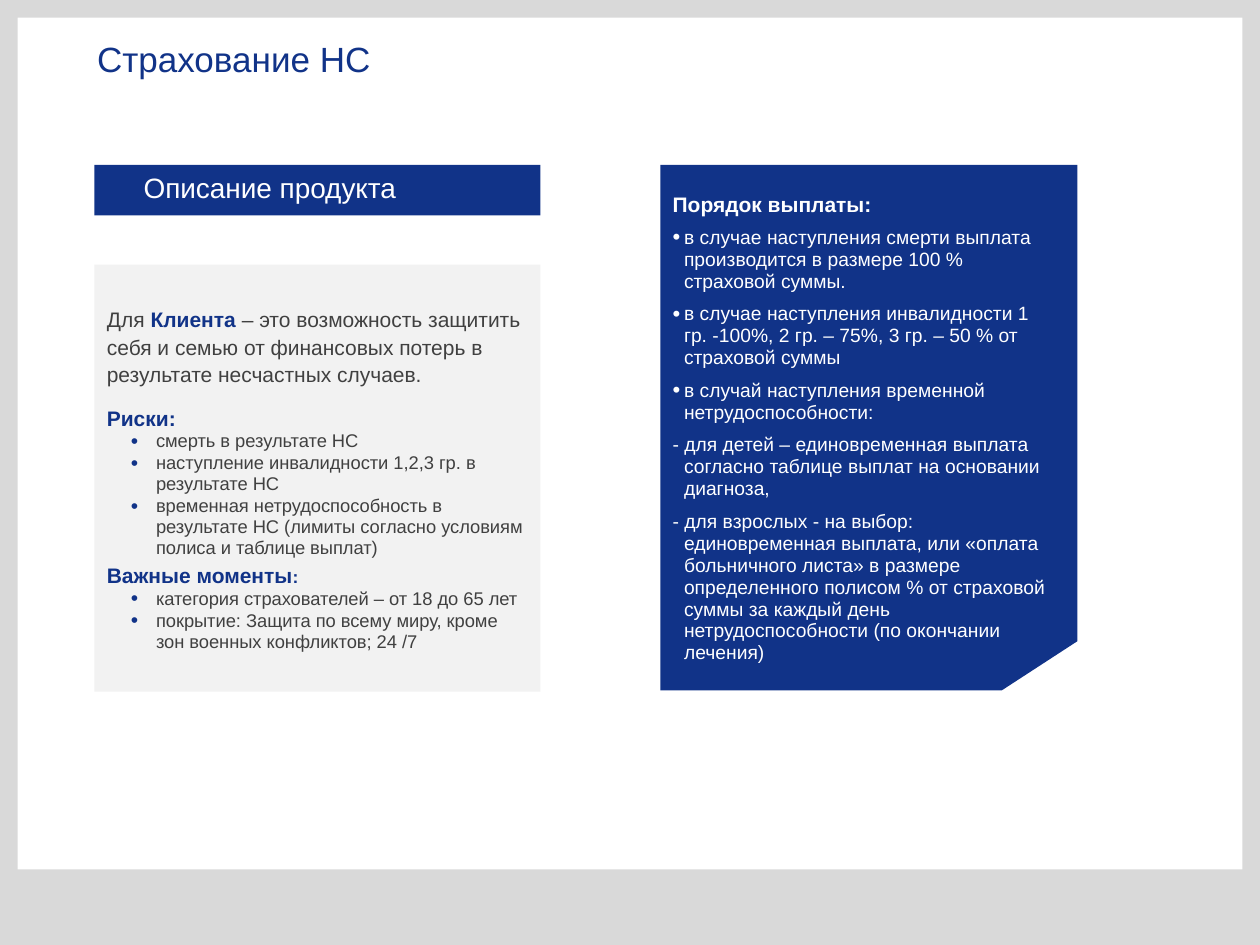
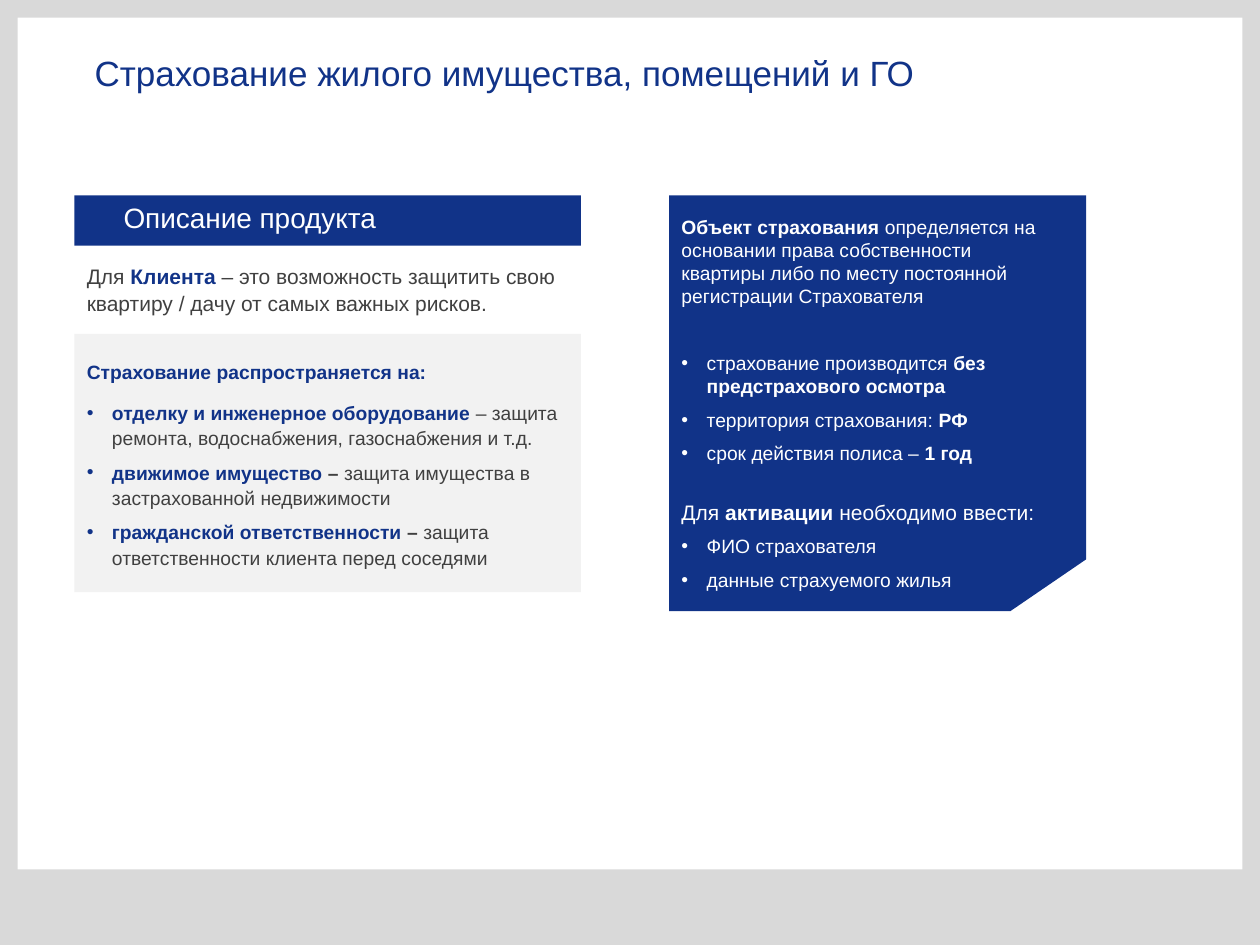
"""Builds two insurance product slides: accident cover and home property cover."""
import dataclasses
import functools
from typing import Any, Optional

import lxml.etree
import pptx
import pptx.dml.color
import pptx.enum.shapes
import pptx.enum.text
import pptx.oxml.ns
import pptx.util

Inches = pptx.util.Inches
Pt = pptx.util.Pt
ANCHOR = pptx.enum.text.MSO_ANCHOR

COLORS = {"navy": "113388", "pale": "F2F2F2", "ink": "404040", "white": "FFFFFF", "frame": "D9D9D9"}
STYLES = {
    "plain": {"color": "ink", "bold": False},
    "dash": {"color": "ink", "bold": True},
    "key": {"color": "navy", "bold": True},
    "light": {"color": "white", "bold": False},
    "light key": {"color": "white", "bold": True},
    "title": {"color": "navy", "bold": False},
}
PANEL_MARGINS = (0.1, 0.05, 0.24, 0.05)


@dataclasses.dataclass(frozen=True)
class Span:
    text: str
    style: str = "plain"
    size: Optional[float] = None


@dataclasses.dataclass(frozen=True)
class Para:
    spans: tuple[Span, ...]
    size: float = 12
    before: float = 0
    line: float = 1.0
    left: float = 0
    hang: float = 0
    bullet: Optional[str] = None
    bullet_percent: int = 100


@dataclasses.dataclass(frozen=True)
class Box:
    left: float
    top: float
    width: float
    height: float


@dataclasses.dataclass(frozen=True)
class Block:
    box: Box
    paras: tuple[Para, ...]
    fill: Optional[str] = None
    anchor: Any = ANCHOR.MIDDLE
    margins: tuple[float, float, float, float] = (0.1, 0.05, 0.1, 0.05)
    cut: Optional[tuple[float, float]] = None


@dataclasses.dataclass(frozen=True)
class Page:
    title: str
    title_box: Box
    title_line: float
    title_anchor: Any
    blocks: tuple[Block, ...]


def rgb(name: str) -> pptx.dml.color.RGBColor:
    """Return the named colour."""
    return pptx.dml.color.RGBColor.from_string(COLORS[name])


def set_all(target: Any, values: dict[str, Any]) -> None:
    """Set every named attribute on the target."""
    for name, value in values.items():
        setattr(target, name, value)


def place(box: Box) -> dict[str, int]:
    """Return the box as lengths keyed by shape attribute."""
    return {name: Inches(value) for name, value in dataclasses.asdict(box).items()}


def add_bullet(properties: Any, para: Para) -> None:
    """Add the bullet colour, size and sign to paragraph properties."""
    qn = pptx.oxml.ns.qn
    colour = lxml.etree.SubElement(properties, qn("a:buClr"))
    lxml.etree.SubElement(colour, qn("a:srgbClr"), val=COLORS[para.bullet])
    lxml.etree.SubElement(properties, qn("a:buSzPct"), val=str(para.bullet_percent * 1000))
    lxml.etree.SubElement(properties, qn("a:buFont"), typeface="Arial")
    lxml.etree.SubElement(properties, qn("a:buChar"), char="•")


def write(frame: Any, paras: tuple[Para, ...], anchor: Any, margins: tuple[float, ...]) -> None:
    """Fill a text frame with formatted paragraphs."""
    sides = ("margin_left", "margin_top", "margin_right", "margin_bottom")
    set_all(frame, {"word_wrap": True, "auto_size": pptx.enum.text.MSO_AUTO_SIZE.NONE,
                    "vertical_anchor": anchor,
                    **{side: Inches(margin) for side, margin in zip(sides, margins)}})
    for index, para in enumerate(paras):
        paragraph = frame.add_paragraph() if index else frame.paragraphs[0]
        set_all(paragraph, {"alignment": pptx.enum.text.PP_ALIGN.LEFT,
                            "line_spacing": para.line, "space_before": Pt(para.before)})
        properties = paragraph._p.get_or_add_pPr()
        properties.set("marL", str(Inches(para.left)))
        properties.set("indent", str(Inches(-para.hang)))
        if para.bullet:
            add_bullet(properties, para)
        for span in para.spans:
            run = paragraph.add_run()
            run.text = span.text
            style = STYLES[span.style]
            set_all(run.font, {"name": "Arial", "size": Pt(span.size or para.size), "bold": style["bold"]})
            run.font.color.rgb = rgb(style["color"])


def paint(shape: Any, fill: str) -> None:
    """Give a shape a flat fill without line or shadow."""
    shape.shadow.inherit = False
    shape.fill.solid()
    shape.fill.fore_color.rgb = rgb(fill)
    shape.line.fill.background()


def add_cut_panel(slide: Any, box: Box, cut: tuple[float, float]) -> Any:
    """Draw a rectangle whose lower right corner is cut off."""
    right, bottom = box.left + box.width, box.top + box.height
    corners = [(right, box.top), (right, bottom - cut[1]), (right - cut[0], bottom), (box.left, bottom)]
    builder = slide.shapes.build_freeform(Inches(box.left), Inches(box.top))
    builder.add_line_segments([(Inches(x), Inches(y)) for x, y in corners])
    return builder.convert_to_shape()


def add_block(slide: Any, block: Block) -> None:
    """Draw one text block in its outline."""
    if block.cut:
        shape = add_cut_panel(slide, block.box, block.cut)
    elif block.fill:
        shape = slide.shapes.add_shape(pptx.enum.shapes.MSO_SHAPE.RECTANGLE, **place(block.box))
    else:
        shape = slide.shapes.add_textbox(**place(block.box))
    if block.fill:
        paint(shape, block.fill)
    write(shape.text_frame, block.paras, block.anchor, block.margins)


def frame_layout(layout: Any, slide: Any) -> None:
    """Give the layout a grey surround and a white sheet."""
    layout.background.fill.solid()
    layout.background.fill.fore_color.rgb = rgb("frame")
    sheet = slide.shapes.add_shape(pptx.enum.shapes.MSO_SHAPE.RECTANGLE, **place(Box(0.14, 0.14, 9.72, 6.76)))
    paint(sheet, "white")
    layout.shapes.element.insert(2, sheet.element)


def heading(left: float, top: float, width: float) -> Block:
    """Return the product description band."""
    para = Para((Span("Описание продукта", "light"),), size=16, line=0.8)
    return Block(Box(left, top, width, 0.4), (para,), "navy", margins=(0.39, 0, 0.39, 0))


def client_para(benefit: str) -> Para:
    """Return the sentence on what the client gains."""
    return Para((Span("Для "), Span("Клиента ", "key"), Span(benefit)), line=1.1)


def risk_item(text: str) -> Para:
    """Return a small bullet of the accident description."""
    return Para((Span(text),), 10.5, 0.5, 0.95, 0.39, 0.2, "navy", 115)


def payout_item(text: str, bullet: Optional[str] = "white") -> Para:
    """Return a rule of the payout panel."""
    return Para((Span(text, "light"),), 11, 6, 0.95, 0.09, 0.09, bullet, 115)


cover_item = functools.partial(Para, size=11, before=5, line=1.1, left=0.2, hang=0.2, bullet="navy")
policy_item = functools.partial(Para, size=11, before=6, left=0.2, hang=0.2, bullet="white")

ACCIDENT_DESCRIPTION = (
    client_para("– это возможность защитить себя и семью от финансовых потерь в результате несчастных случаев."),
    Para((Span("Риски:", "key"),), before=9, line=1.1),
    risk_item("смерть в результате НС"),
    risk_item("наступление инвалидности 1,2,3 гр. в результате НС"),
    risk_item("временная нетрудоспособность в результате НС (лимиты согласно условиям полиса и таблице выплат)"),
    Para((Span("Важные моменты", "key"), Span(":", "key", 10)), before=3, line=0.95),
    risk_item("категория страхователей – от 18 до 65 лет"),
    risk_item("покрытие: Защита по всему миру, кроме зон военных конфликтов; 24 /7"),
)
PAYOUT = (
    Para((Span("Порядок выплаты:", "light key"),), left=0.09, hang=0.09),
    payout_item("в случае наступления смерти выплата производится в размере 100 % страховой суммы."),
    payout_item("в случае наступления инвалидности 1 гр. -100%, 2 гр. – 75%, 3 гр. – 50 % от страховой суммы"),
    payout_item("в случай наступления временной нетрудоспособности:"),
    payout_item("- для детей – единовременная выплата согласно таблице выплат на основании диагноза,", None),
    payout_item("- для взрослых - на выбор: единовременная выплата, или «оплата больничного листа» в размере "
                "определенного полисом % от страховой суммы за каждый день нетрудоспособности "
                "(по окончании лечения)", None),
)
COVERAGE = (
    Para((Span("Страхование распространяется на:", "key"),), size=11, line=1.1),
    cover_item((Span("отделку и инженерное оборудование ", "key"),
                Span("– защита ремонта, водоснабжения, газоснабжения и т.д.")), before=9),
    cover_item((Span("движимое имущество ", "key"), Span("– ", "dash"),
                Span("защита имущества в застрахованной недвижимости"))),
    cover_item((Span("гражданской ответственности ", "key"), Span("– ", "dash"),
                Span("защита ответственности клиента перед соседями"))),
)
POLICY = (
    Para((Span("Объект страхования ", "light key"),
          Span("определяется на основании права собственности квартиры либо по месту постоянной "
               "регистрации Страхователя", "light")), size=11),
    policy_item((Span("страхование производится ", "light"),
                 Span("без предстрахового осмотра", "light key")), before=25),
    policy_item((Span("территория страхования: ", "light"), Span("РФ", "light key"))),
    policy_item((Span("срок действия полиса – ", "light"), Span("1 год", "light key"))),
    Para((Span("Для", "light"), Span(" активации ", "light key"), Span("необходимо ввести:", "light")),
         before=22.5, line=0.8, left=0.2, hang=0.2),
    policy_item((Span("ФИО страхователя", "light"),)),
    policy_item((Span("данные страхуемого жилья", "light"),)),
)
PAGES = (
    Page("Страхование НС", Box(0.67, 0.31, 9.21, 0.37), 0.8, ANCHOR.TOP, (
        heading(0.75, 1.31, 3.54),
        Block(Box(0.75, 2.1, 3.54, 3.39), ACCIDENT_DESCRIPTION, "pale"),
        Block(Box(5.24, 1.31, 3.31, 4.17), PAYOUT, "navy", margins=PANEL_MARGINS, cut=(0.6, 0.39)),
    )),
    Page("Страхование жилого имущества, помещений и ГО", Box(0.65, 0.32, 9, 0.51), 1.0, ANCHOR.MIDDLE, (
        Block(Box(0.59, 2.02, 4.02, 0.47),
              (client_para("– это возможность защитить свою квартиру / дачу от самых важных рисков."),),
              anchor=ANCHOR.TOP),
        Block(Box(0.59, 2.65, 4.02, 2.05), COVERAGE, "pale", ANCHOR.TOP, (0.1, 0.19, 0.1, 0.05)),
        heading(0.59, 1.55, 4.02),
        Block(Box(5.31, 1.55, 3.31, 3.3), POLICY, "navy", margins=PANEL_MARGINS, cut=(0.6, 0.41)),
    )),
)


def main() -> None:
    """Build and save the presentation."""
    deck = pptx.Presentation()
    set_all(deck, {"slide_width": Inches(10), "slide_height": Inches(7.5)})
    layout = deck.slide_layouts.get_by_name("Title Only")
    for index, page in enumerate(PAGES):
        slide = deck.slides.add_slide(layout)
        if index == 0:
            frame_layout(layout, slide)
        title = slide.shapes.title
        set_all(title, place(page.title_box))
        title_para = Para((Span(page.title, "title"),), size=20, line=page.title_line)
        write(title.text_frame, (title_para,), page.title_anchor, (0.1, 0.05, 0.1, 0.05))
        for block in page.blocks:
            add_block(slide, block)
    deck.save("out.pptx")


if __name__ == "__main__":
    main()
